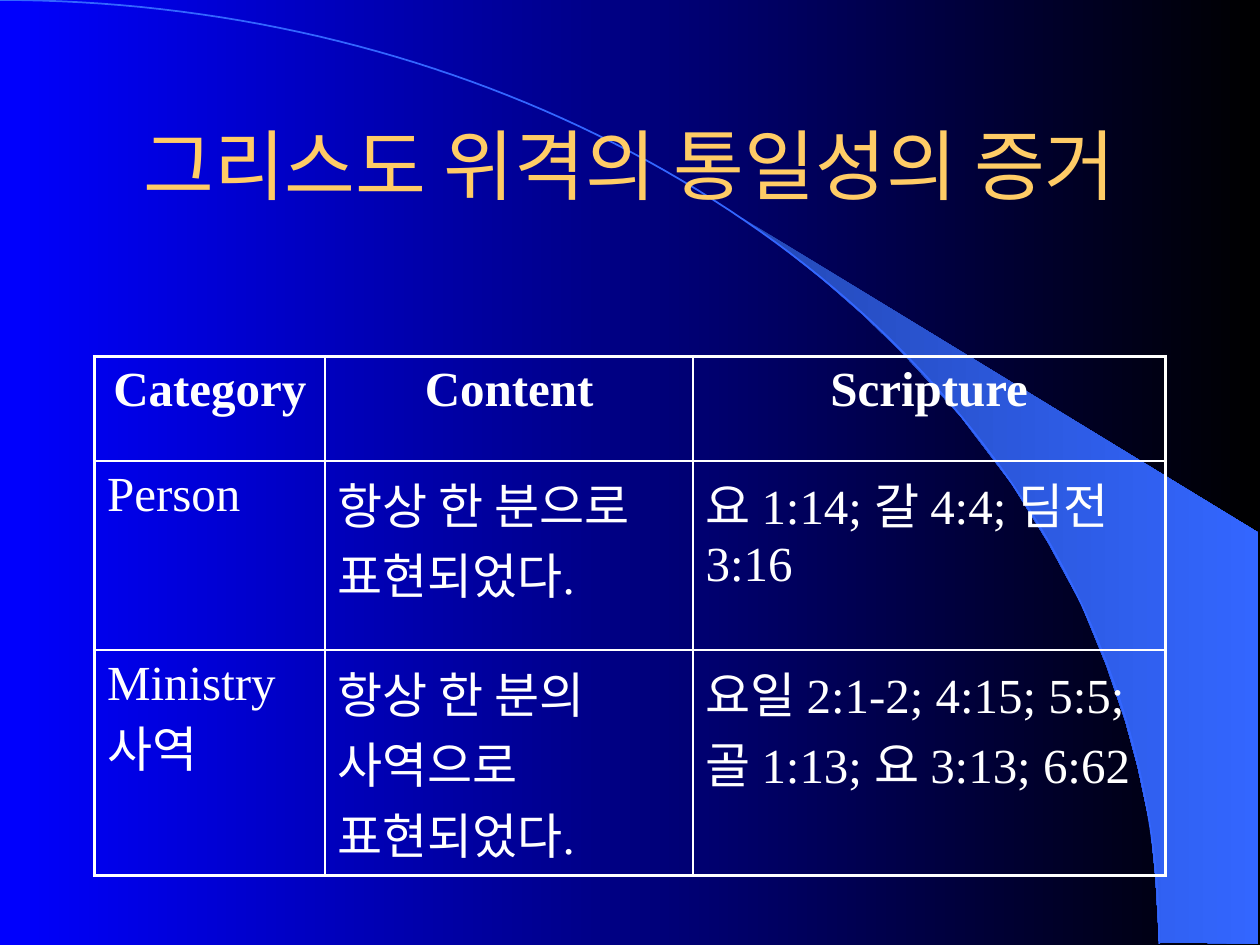
from dataclasses import dataclass
from math import cos, pi, sin

from lxml import etree
from pptx import Presentation
from pptx import util as u
from pptx.dml import color
from pptx.enum import text
from pptx.oxml import ns

WIDE, HIGH = 10, 7.5
WHITE, BLUE, GOLD = "FFFFFF", "3366FF", "FFCC66"
SERIF, SANS = "Times New Roman", "Arial"
COLS, ROWS = (1.83, 2.92, 3.75), (0.83, 1.5, 1.79)
BEAM = [(9.2, 7.48), (9.99, 7.49), (9.99, 4.23), (5.89, 1.73), (6.24, 1.99),
        (6.53, 2.22), (6.85, 2.5), (7.16, 2.8), (7.62, 3.3), (8.03, 3.84),
        (8.32, 4.31), (8.58, 4.79), (8.78, 5.28), (8.93, 5.72), (9.03, 6.09),
        (9.13, 6.56), (9.17, 6.96)]
STEPS = 90
ARC = [(9.2 * sin(pi / 2 * i / STEPS), 7.49 * (1 - cos(pi / 2 * i / STEPS)))
       for i in range(STEPS + 1)]
GRID = (
    ("Category", "Content", "Scripture"),
    ("Person", "항상 한 분으로 표현되었다.", "요 1:14; 갈 4:4; 딤전 3:16"),
    ("Ministry 사역", "항상 한 분의 사역으로 표현되었다.",
     "요일 2:1-2; 4:15; 5:5; 골 1:13; 요 3:13; 6:62"),
)


@dataclass
class Style:
    """Look of one run of text."""
    size: float
    font: str
    tint: str
    bold: bool = False
    align: text.PP_ALIGN = text.PP_ALIGN.LEFT


def rgb(tint: str) -> color.RGBColor:
    """Turn a hex string into a colour."""
    return color.RGBColor.from_string(tint)


def blend(fill, start: str, end: str) -> None:
    """Fill from left to right with two colours."""
    fill.gradient()
    fill.gradient_angle = 0
    for stop, tint in zip(fill.gradient_stops, (start, end)):
        stop.color.rgb = rgb(tint)


def trace(slide, dots: list, close: bool):
    """Draw an outline through points given in inches."""
    first, *rest = [(u.Inches(x), u.Inches(y)) for x, y in dots]
    pen = slide.shapes.build_freeform(*first)
    pen.add_line_segments(rest, close=close)
    shape = pen.convert_to_shape()
    shape.shadow.inherit = False
    return shape


def write(para, words: str, style: Style) -> None:
    """Add one run to a paragraph."""
    para.alignment = style.align
    run = para.add_run()
    run.text = words
    font = run.font
    font.size, font.name, font.bold = u.Pt(style.size), style.font, style.bold
    font.color.rgb = rgb(style.tint)


def edge(cell, side: str, width: float) -> None:
    """Add one white border to a cell."""
    line = etree.SubElement(cell._tc.get_or_add_tcPr(), ns.qn(f"a:ln{side}"),
                            w=str(u.Pt(width)))
    fill = etree.SubElement(line, ns.qn("a:solidFill"))
    etree.SubElement(fill, ns.qn("a:srgbClr"), val=WHITE)


def title(slide) -> None:
    """Write the heading."""
    box = slide.shapes.add_textbox(*map(u.Inches, (0.75, 0.67, 8.5, 1.25)))
    frame = box.text_frame
    frame.word_wrap = True
    frame.vertical_anchor = text.MSO_ANCHOR.MIDDLE
    write(frame.paragraphs[0], "그리스도 위격의 통일성의 증거",
          Style(44, SANS, GOLD, align=text.PP_ALIGN.CENTER))


def table(slide) -> None:
    """Draw the table with a heavy frame and thin inner rules."""
    area = map(u.Inches, (0.75, 2.83, sum(COLS), sum(ROWS)))
    grid = slide.shapes.add_table(len(ROWS), len(COLS), *area).table
    grid.first_row = grid.horz_banding = False
    for col, width in zip(grid.columns, COLS):
        col.width = u.Inches(width)
    for row, height in zip(grid.rows, ROWS):
        row.height = u.Inches(height)
    head = Style(28, SERIF, WHITE, True, text.PP_ALIGN.CENTER)
    body = Style(28, SERIF, WHITE)
    for r, line in enumerate(GRID):
        for c, words in enumerate(line):
            cell = grid.cell(r, c)
            outer = {"L": c == 0, "R": c == len(COLS) - 1,
                     "T": r == 0, "B": r == len(ROWS) - 1}
            for side, heavy in outer.items():
                edge(cell, side, 2.25 if heavy else 1)
            cell.fill.background()
            para = cell.text_frame.paragraphs[0]
            para.space_before = u.Pt(5.6)
            write(para, words, body if r else head)


def main() -> None:
    """Build and save the slide."""
    deck = Presentation()
    deck.slide_width, deck.slide_height = u.Inches(WIDE), u.Inches(HIGH)
    slide = deck.slides.add_slide(deck.slide_layouts[6])
    blend(slide.background.fill, "0000FF", "000000")
    beam = trace(slide, BEAM, True)
    blend(beam.fill, "2449B6", BLUE)
    beam.line.fill.background()
    arc = trace(slide, ARC, False)
    arc.fill.background()
    arc.line.color.rgb = rgb(BLUE)
    arc.line.width = u.Pt(1)
    title(slide)
    table(slide)
    deck.save("out.pptx")


if __name__ == "__main__":
    main()
